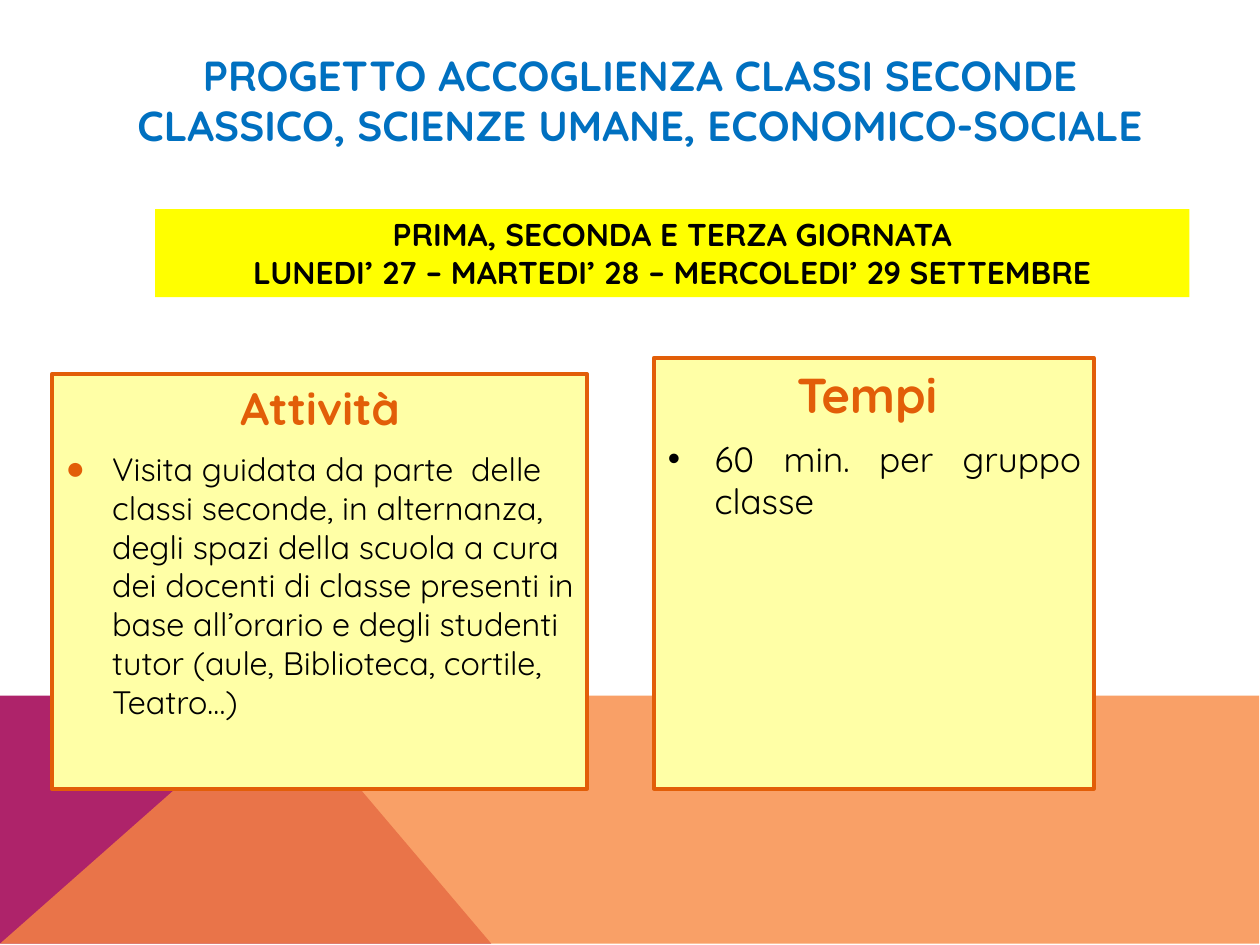
from dataclasses import dataclass

from lxml.etree import SubElement
from pptx import Presentation
from pptx.dml.color import RGBColor
from pptx.enum.shapes import MSO_SHAPE
from pptx.enum.text import MSO_ANCHOR, MSO_AUTO_SIZE, PP_ALIGN as Align
from pptx.oxml.ns import qn
from pptx.util import Pt

FONT = "Quicksand"
COLORS = {
    "magenta": "AE236A",
    "orange": "F88941",
    "blue": "0070C0",
    "yellow": "FFFF00",
    "cream": "FFFFA6",
    "accent": "E25E08",
    "black": "000000",
}


@dataclass
class Box:
    left: float
    top: float
    width: float
    height: float


@dataclass
class Card:
    box: Box
    heading: str
    heading_size: float
    heading_hangs: bool
    item: str
    item_size: float
    item_align: Align
    bullet: str
    bullet_color: str


CARDS = [
    Card(Box(29.5, 213.8, 306, 236.9), "Attività", 25.9, True,
         "Visita guidata da parte  delle classi seconde, in alternanza, "
         "degli spazi della scuola a cura dei docenti di classe presenti in "
         "base all’orario e degli studenti tutor (aule, Biblioteca, cortile, "
         "Teatro…)", 18.5, Align.LEFT, "●", "accent"),
    Card(Box(373.7, 204.5, 251.3, 246.2), "Tempi ", 28, False,
         "60 min. per gruppo classe", 20, Align.JUSTIFY, "•", "black"),
]


def rgb(name: str) -> RGBColor:
    return RGBColor.from_string(COLORS[name])


def place(shape, box: Box) -> None:
    shape.left, shape.top = Pt(box.left), Pt(box.top)
    shape.width, shape.height = Pt(box.width), Pt(box.height)


def fill_solid(shape, color: str) -> None:
    shape.fill.solid()
    shape.fill.fore_color.rgb = rgb(color)


def prepare_text(shape, text: str) -> list:
    frame = shape.text_frame
    frame.text = text
    frame.word_wrap = True
    frame.auto_size = MSO_AUTO_SIZE.NONE
    frame.vertical_anchor = MSO_ANCHOR.TOP
    return list(frame.paragraphs)


def style(paragraph, size: float, color: str, bold: bool, align: Align) -> None:
    paragraph.alignment = align
    for run in paragraph.runs:
        run.font.name = FONT
        run.font.size = Pt(size)
        run.font.bold = bold
        run.font.color.rgb = rgb(color)


def set_bullet(paragraph, hanging: bool, char: str = "", color: str = "") -> None:
    """Set the indent and either a coloured bullet or none."""
    props = paragraph._p.get_or_add_pPr()
    props.set("marL", str(Pt(27.4) if hanging else 0))
    props.set("indent", str(Pt(-26.6) if hanging else 0))
    if char:
        bullet_color = SubElement(props, qn("a:buClr"))
        SubElement(bullet_color, qn("a:srgbClr"), val=COLORS[color])
        SubElement(props, qn("a:buChar"), char=char)
    else:
        SubElement(props, qn("a:buNone"))


def draw_backdrop(slide, layer: int, points: list, color: str, opacity: int = 100) -> None:
    """Draw a borderless polygon behind the text."""
    builder = slide.shapes.build_freeform(Pt(points[0][0]), Pt(points[0][1]), scale=1.0)
    builder.add_line_segments([(Pt(x), Pt(y)) for x, y in points[1:]], close=True)
    polygon = builder.convert_to_shape()
    polygon.shadow.inherit = False
    fill_solid(polygon, color)
    polygon.line.fill.background()
    if opacity < 100:
        color_node = polygon.element.spPr.find(f".//{qn('a:srgbClr')}")
        SubElement(color_node, qn("a:alpha"), val=str(opacity * 1000))
    # The first two children of the tree are its properties
    slide.shapes.element.insert(2 + layer, polygon.element)


def draw_card(placeholder, card: Card) -> None:
    place(placeholder, card.box)
    fill_solid(placeholder, "cream")
    placeholder.line.color.rgb = rgb("accent")
    placeholder.line.width = Pt(2.25)
    heading, item = prepare_text(placeholder, f"{card.heading}\n{card.item}")
    style(heading, card.heading_size, "accent", True, Align.CENTER)
    style(item, card.item_size, "black", False, card.item_align)
    for paragraph in (heading, item):
        paragraph.space_before = Pt(8)
    set_bullet(heading, card.heading_hangs)
    set_bullet(item, True, card.bullet, card.bullet_color)


def main() -> None:
    prs = Presentation()
    prs.slide_width, prs.slide_height = Pt(720), Pt(540)
    slide = prs.slides.add_slide(prs.slide_layouts[3])
    title, *bodies = list(slide.placeholders)[:3]
    for placeholder in list(slide.placeholders)[3:]:
        placeholder.element.getparent().remove(placeholder.element)

    # Coloured floor
    floor_top, floor_bottom, ridge = 397.5, 539.3, 160.6
    draw_backdrop(slide, 0, [(0, floor_bottom), (0, floor_top), (ridge, floor_top),
                             (280.8, floor_bottom)], "magenta")
    draw_backdrop(slide, 1, [(0, floor_bottom), (ridge, floor_top), (719.5, floor_top),
                             (719.5, floor_bottom)], "orange", opacity=80)

    # Title
    place(title, Box(51.8, 24.5, 627.8, 65.5))
    (heading,) = prepare_text(title, "PROGETTO ACCOGLIENZA CLASSI SECONDE CLASSICO, "
                                     "SCIENZE UMANE, ECONOMICO-SOCIALE")
    style(heading, 24, "blue", True, Align.CENTER)

    # Dates band
    dates = slide.shapes.add_shape(MSO_SHAPE.RECTANGLE, Pt(88.6), Pt(119.5),
                                   Pt(591.1), Pt(50.4))
    dates.shadow.inherit = False
    fill_solid(dates, "yellow")
    dates.line.fill.background()
    (days,) = prepare_text(dates, "PRIMA, SECONDA E TERZA GIORNATA\v"
                                  "LUNEDI’ 27 – MARTEDI’ 28 – MERCOLEDI’ 29 SETTEMBRE")
    style(days, 18, "black", True, Align.CENTER)

    # Activity and timing cards
    for body, card in zip(bodies, CARDS):
        draw_card(body, card)

    prs.save("out.pptx")


if __name__ == "__main__":
    main()
